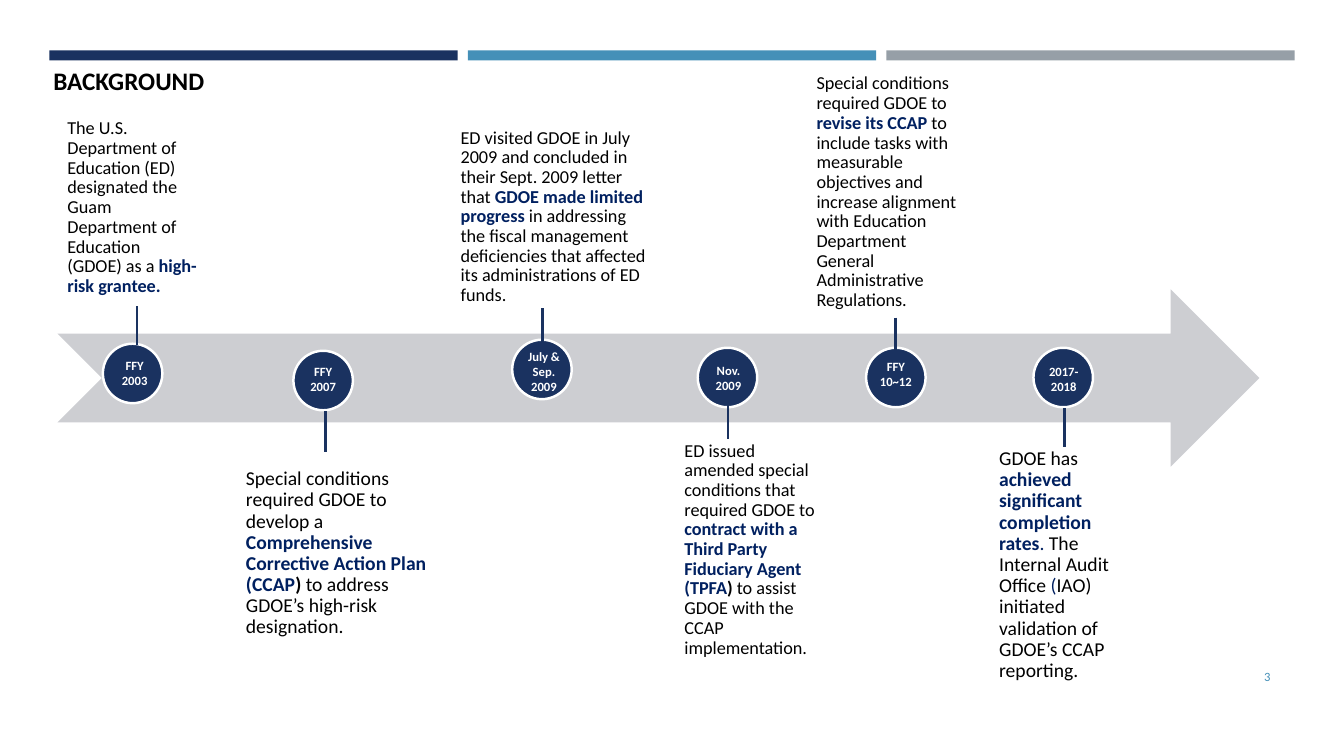
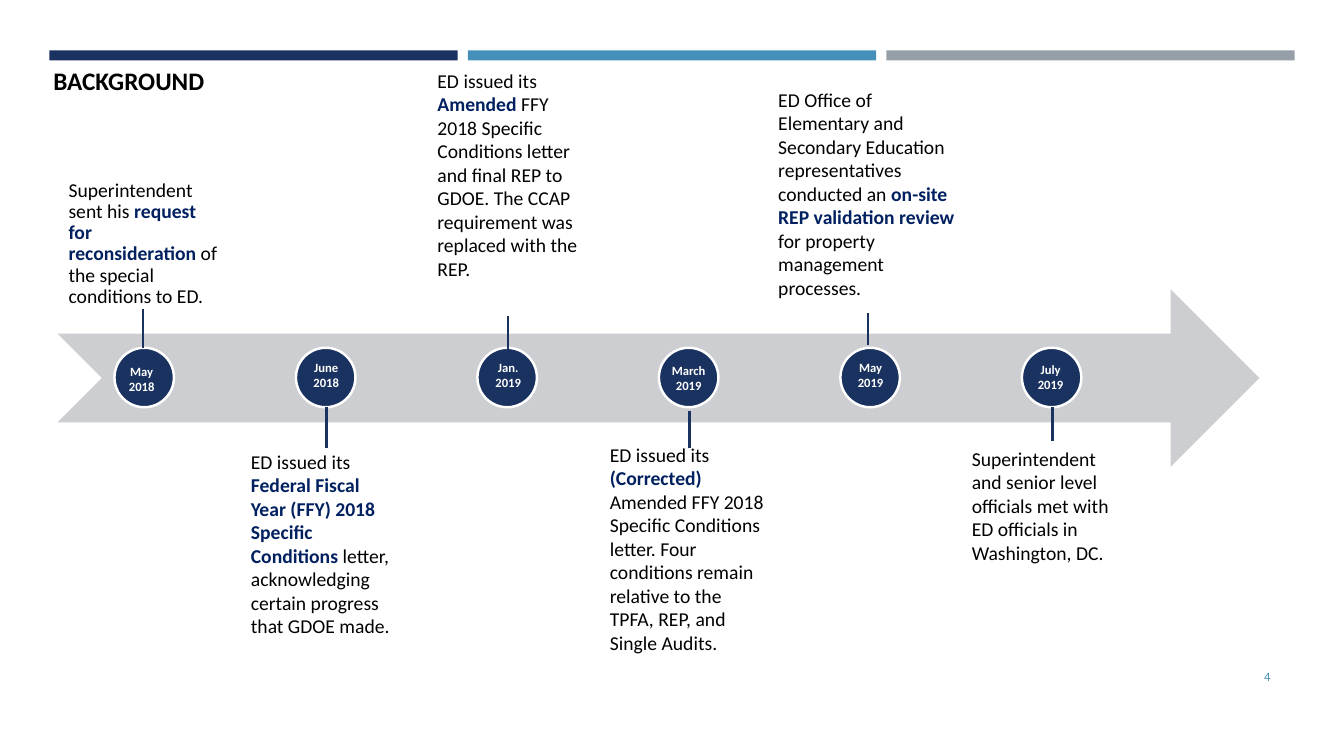
"""Build two timeline slides on the background of the GDOE special conditions."""
import dataclasses

import lxml.etree
import pptx
import pptx.dml.color
import pptx.enum.shapes
import pptx.enum.text
import pptx.oxml.ns
import pptx.util

Inches = pptx.util.Inches
Pt = pptx.util.Pt
RGBColor = pptx.dml.color.RGBColor
SHAPE = pptx.enum.shapes.MSO_SHAPE
ALIGN = pptx.enum.text.PP_ALIGN
ANCHOR = pptx.enum.text.MSO_ANCHOR

NAVY = RGBColor(0x1A, 0x32, 0x60)
BLUE = RGBColor(0x45, 0x90, 0xB8)
GRAY = RGBColor(0x96, 0x9F, 0xA7)
ARROW_GRAY = RGBColor(0xCD, 0xCE, 0xD2)
EMPHASIS = RGBColor(0x00, 0x20, 0x60)
BLACK = RGBColor(0x00, 0x00, 0x00)
WHITE = RGBColor(0xFF, 0xFF, 0xFF)

FONT = "Calibri"
STROKE = Pt(1.75)
CIRCLE_SIZE = 0.59
ARROW_TOP = 2.87

PLAIN = (BLACK, False)
KEY = (EMPHASIS, True)
BOLD = (BLACK, True)
TINT = (EMPHASIS, False)


@dataclasses.dataclass
class Event:
    """One dated point on the timeline; lengths are in inches."""
    date: str
    date_box: tuple
    circle: tuple
    stem: tuple
    story_box: tuple
    story: list
    size: int = 14
    inset: float = 0


EARLY_EVENTS = [
    Event("FFY 2003", (1.09, 3.5, 0.49, 0.4), (1.02, 3.41), (1.36, 3.04, 3.42),
          (0.57, 0.83, 1.5, 2.21),
          [("The U.S. Department of Education (ED) designated the Guam "
            "Department of Education (GDOE) as a ", PLAIN),
           ("high-risk grantee.", KEY)], 13, 0.1),
    Event("FFY 2007", (2.96, 3.56, 0.49, 0.4), (2.91, 3.48), (3.23, 4.08, 4.48),
          (2.33, 4.54, 2.14, 1.94),
          [("Special conditions required GDOE to develop a ", PLAIN),
           ("Comprehensive Corrective Action Plan (CCAP", KEY),
           (") ", BOLD),
           ("to address GDOE’s high-risk designation.", PLAIN)], 14, 0.11),
    Event("July & Sep. 2009", (5.07, 3.41, 0.65, 0.56), (5.08, 3.37),
          (5.38, 3.06, 3.42), (4.47, 1.08, 2.04, 2.05),
          [("ED visited GDOE in July 2009 and concluded in their Sept. 2009 "
            "letter that ", PLAIN),
           ("GDOE made limited progress ", KEY),
           ("in addressing the fiscal management deficiencies that affected "
            "its administrations of ED funds.", PLAIN)], 13, 0.1),
    Event("Nov. 2009", (6.98, 3.55, 0.49, 0.4), (6.92, 3.45), (7.22, 3.95, 4.36),
          (6.69, 4.28, 1.5, 2.37),
          [("ED issued amended special conditions that required GDOE to ", PLAIN),
           ("contract with a Third Party Fiduciary Agent (TPFA", KEY),
           (") ", BOLD),
           ("to assist GDOE with the CCAP implementation.", PLAIN)], 13, 0.1),
    Event("FFY 10~12", (8.58, 3.51, 0.61, 0.4), (8.59, 3.45), (8.88, 3.15, 3.48),
          (8, 0.81, 1.68, 2.37),
          [("Special conditions required GDOE to ", PLAIN),
           ("revise its CCAP ", KEY),
           ("to include tasks with measurable objectives and increase "
            "alignment with Education Department General Administrative "
            "Regulations.", PLAIN)], 13, 0.1),
    Event("2017-2018", (10.24, 3.56, 0.62, 0.4), (10.25, 3.45),
          (10.56, 4.05, 4.43), (9.8, 4.34, 1.5, 2.37),
          [("GDOE has ", PLAIN),
           ("achieved significant completion rates", KEY),
           (". ", TINT),
           ("The Internal Audit Office ", PLAIN),
           ("(", TINT),
           ("IAO) initiated validation of GDOE’s CCAP reporting.", PLAIN)],
          14, 0.11),
]

LATE_CIRCLES = [(1.135 + 1.8 * step, 3.45) for step in range(6)]

LATE_EVENTS = [
    Event("May 2018", (1.16, 3.56, 0.49, 0.4), LATE_CIRCLES[0],
          (1.42, 3.07, 3.45), (0.57, 0.79, 1.72, 2.37),
          [("Superintendent sent his ", PLAIN),
           ("request for reconsideration ", KEY),
           ("of the special conditions to ED.", PLAIN)], 14, 0.11),
    Event("June 2018", (2.91, 3.52, 0.65, 0.4), LATE_CIRCLES[1],
          (3.24, 4.04, 4.44), (2.39, 4.41, 1.67, 2.22),
          [("ED issued its ", PLAIN),
           ("Federal Fiscal Year (FFY) 2018 Specific Conditions ", KEY),
           ("letter, acknowledging certain progress that GDOE made.", PLAIN)]),
    Event("Jan. 2019", (4.73, 3.52, 0.62, 0.4), LATE_CIRCLES[2],
          (5.04, 3.14, 3.5), (4.24, 0.63, 1.67, 2.46),
          [("ED issued its ", PLAIN),
           ("Amended ", KEY),
           ("FFY 2018 Specific Conditions letter and final REP to GDOE. The "
            "CCAP requirement was replaced with the REP.", PLAIN)]),
    Event("March 2019", (6.54, 3.55, 0.58, 0.4), LATE_CIRCLES[3],
          (6.84, 4.08, 4.44), (5.95, 4.34, 1.75, 2.52),
          [("ED issued its ", PLAIN),
           ("(Corrected) ", KEY),
           ("Amended FFY 2018 Specific Conditions letter. Four conditions "
            "remain relative to the TPFA, REP, and Single Audits.", PLAIN)]),
    Event("May 2019", (8.33, 3.52, 0.61, 0.4), LATE_CIRCLES[4],
          (8.61, 3.11, 3.42), (7.62, 0.82, 1.99, 2.22),
          [("ED Office of Elementary and Secondary Education representatives "
            "conducted an ", PLAIN),
           ("on-site REP validation review", KEY),
           (" for property management processes.", PLAIN)]),
    Event("July 2019", (10.11, 3.54, 0.62, 0.4), LATE_CIRCLES[5],
          (10.44, 4.04, 4.38), (9.54, 4.38, 1.77, 1.28),
          [("Superintendent and senior level officials met with ED officials "
            "in Washington, DC.", PLAIN)]),
]


def add_figure(slide, preset, box, fill, outline=None):
    """Add a filled preset shape, outlined only when a colour is given."""
    figure = slide.shapes.add_shape(preset, *map(Inches, box))
    figure.shadow.inherit = False
    figure.fill.solid()
    figure.fill.fore_color.rgb = fill
    if outline is None:
        figure.line.fill.background()
    else:
        figure.line.color.rgb = outline
        figure.line.width = STROKE


def add_text(slide, box, size, runs, align=ALIGN.LEFT, anchor=ANCHOR.TOP):
    """Add a wrapped one-paragraph text box and return its text frame."""
    frame = slide.shapes.add_textbox(*map(Inches, box)).text_frame
    frame.word_wrap = True
    frame.vertical_anchor = anchor
    paragraph = frame.paragraphs[0]
    paragraph.alignment = align
    paragraph.font.name = FONT
    paragraph.font.size = Pt(size)
    for words, (color, bold) in runs:
        run = paragraph.add_run()
        run.text = words
        run.font.color.rgb = color
        run.font.bold = bold
    return frame


def add_stem(slide, x, top, bottom):
    """Add a vertical line between a date and its story."""
    stem = slide.shapes.add_connector(
        pptx.enum.shapes.MSO_CONNECTOR.STRAIGHT,
        Inches(x), Inches(top), Inches(x), Inches(bottom))
    stem.line.color.rgb = NAVY
    stem.line.width = STROKE
    lxml.etree.SubElement(stem._element.spPr, pptx.oxml.ns.qn("a:effectLst"))


def add_story(slide, event):
    """Add the account of an event, tightly set when it has an inset."""
    above = event.story_box[1] < ARROW_TOP
    anchor = ANCHOR.BOTTOM if above and event.inset else ANCHOR.TOP
    frame = add_text(slide, event.story_box, event.size, event.story,
                     anchor=anchor)
    if event.inset:
        frame.margin_left = frame.margin_right = Inches(event.inset)
        frame.margin_top = frame.margin_bottom = Inches(event.inset)
        frame.paragraphs[0].line_spacing = 0.9


def add_event(slide, event):
    """Add the story, circle, date and stem of one event."""
    add_story(slide, event)
    add_figure(slide, SHAPE.OVAL, (*event.circle, CIRCLE_SIZE, CIRCLE_SIZE),
               NAVY, WHITE)
    add_text(slide, event.date_box, 9, [(event.date, (WHITE, True))],
             ALIGN.CENTER)
    add_stem(slide, *event.stem)


def add_timeline_slide(deck, number, events):
    """Add a slide with bands, title, number, arrow and events."""
    slide = deck.slides.add_slide(deck.slide_layouts[6])
    for column, color in enumerate((NAVY, BLUE, GRAY)):
        add_figure(slide, SHAPE.RECTANGLE, (0.49 + 4.15 * column, 0.5, 4.05, 0.1),
                   color)
    add_text(slide, (11.55, 6.51, 1.15, 0.4), 9, [(str(number), (BLUE, False))],
             ALIGN.RIGHT, ANCHOR.MIDDLE)
    add_figure(slide, SHAPE.NOTCHED_RIGHT_ARROW, (0.57, ARROW_TOP, 11.92, 1.76),
               ARROW_GRAY)
    for event in events:
        add_event(slide, event)
    add_text(slide, (0.43, 0.6, 6.12, 0.4), 18, [("BACKGROUND", BOLD)])


def main():
    """Build and save the deck."""
    deck = pptx.Presentation()
    deck.slide_width = Inches(13.33)
    deck.slide_height = Inches(7.5)
    for number, events in enumerate((EARLY_EVENTS, LATE_EVENTS), start=3):
        add_timeline_slide(deck, number, events)
    deck.save("out.pptx")


if __name__ == "__main__":
    main()
